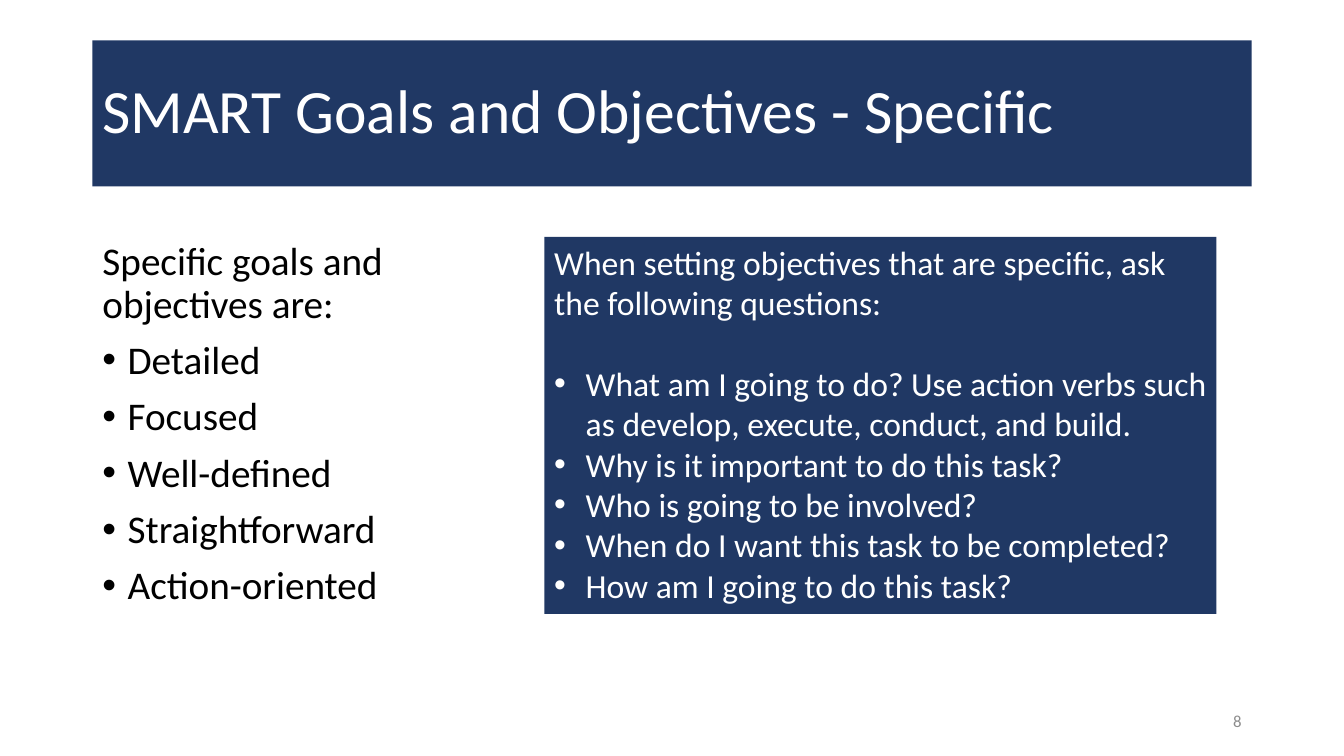
from lxml.etree import SubElement
from pptx import Presentation
from pptx.dml.color import RGBColor
from pptx.enum.shapes import MSO_SHAPE
from pptx.enum.text import MSO_ANCHOR as Anchor, MSO_AUTO_SIZE as AutoSize, PP_ALIGN as Align
from pptx.oxml.ns import qn
from pptx.util import Pt

NAVY, WHITE, BLACK, GRAY = "203864", "FFFFFF", "000000", "8C8C8C"
QUALITIES = ["Detailed", "Focused", "Well-defined", "Straightforward", "Action-oriented"]
QUESTIONS = [
    "What am I going to do? Use action verbs such as develop, execute, conduct, and build.",
    "Why is it important to do this task?",
    "Who is going to be involved?",
    "When do I want this task to be completed?",
    "How am I going to do this task?",
]


def color(hex_string):
    return RGBColor.from_string(hex_string)


def place(shape, left, top, width, height):
    shape.left, shape.top, shape.width, shape.height = map(Pt, (left, top, width, height))


def fill_navy(shape):
    shape.fill.solid()
    shape.fill.fore_color.rgb = color(NAVY)
    shape.line.fill.background()


def set_indent(paragraph, indent):
    """Hang a bullet by indent points; zero means no bullet."""
    properties = paragraph._p.get_or_add_pPr()
    properties.set("marL", str(Pt(indent)))
    properties.set("indent", str(-Pt(indent)))
    if indent:
        SubElement(properties, qn("a:buFont"), typeface="Arial")
        SubElement(properties, qn("a:buChar"), char="•")
    else:
        SubElement(properties, qn("a:buNone"))


def write(paragraph, text, size, hex_string, align=Align.LEFT, line=1.0, before=0, after=0):
    paragraph.text = text
    paragraph.alignment = align
    paragraph.line_spacing = line
    paragraph.space_before = Pt(before)
    paragraph.space_after = Pt(after)
    font = paragraph.font
    font.name, font.size = "Calibri", Pt(size)
    font.color.rgb = color(hex_string)


def write_list(frame, heading, items, indent, size, hex_string, heading_gap=0, **spacing):
    frame.word_wrap = True
    frame.vertical_anchor = Anchor.TOP
    frame.auto_size = AutoSize.NONE
    heading_paragraph = frame.paragraphs[0]
    write(heading_paragraph, heading, size, hex_string, after=heading_gap, **spacing)
    set_indent(heading_paragraph, 0)
    for item in items:
        paragraph = frame.add_paragraph()
        write(paragraph, item, size, hex_string, **spacing)
        set_indent(paragraph, indent)


def add_title(slide, text):
    title = slide.shapes.title
    place(title, 66, 28.8, 828, 104.4)
    fill_navy(title)
    title.text_frame.auto_size = AutoSize.NONE
    title.text_frame.vertical_anchor = Anchor.MIDDLE
    write(title.text_frame.paragraphs[0], text, 44, WHITE, line=0.9)


def add_qualities(slide):
    body = slide.placeholders[1]
    place(body, 66, 169.2, 295.2, 288.7)
    write_list(body.text_frame, "Specific goals and objectives are:", QUALITIES,
               18, 28, BLACK, line=0.9, before=10)


def add_page_number(slide, number):
    box = slide.shapes.add_textbox(Pt(678), Pt(500.4), Pt(216), Pt(28.8))
    box.text_frame.word_wrap = True
    box.text_frame.vertical_anchor = Anchor.MIDDLE
    write(box.text_frame.paragraphs[0], number, 12, GRAY, align=Align.RIGHT)


def add_questions(slide):
    panel = slide.shapes.add_shape(
        MSO_SHAPE.RECTANGLE, Pt(388.8), Pt(169.2), Pt(480.2), Pt(269.3))
    panel.shadow.inherit = False
    fill_navy(panel)
    write_list(panel.text_frame,
               "When setting objectives that are specific, ask the following questions:",
               QUESTIONS, 22.5, 24, WHITE, heading_gap=29)


def main():
    presentation = Presentation()
    presentation.slide_width, presentation.slide_height = Pt(960), Pt(540)
    slide = presentation.slides.add_slide(presentation.slide_layouts[1])
    add_title(slide, "SMART Goals and Objectives - Specific")
    add_qualities(slide)
    add_page_number(slide, "8")
    add_questions(slide)
    presentation.save("out.pptx")


if __name__ == "__main__":
    main()
